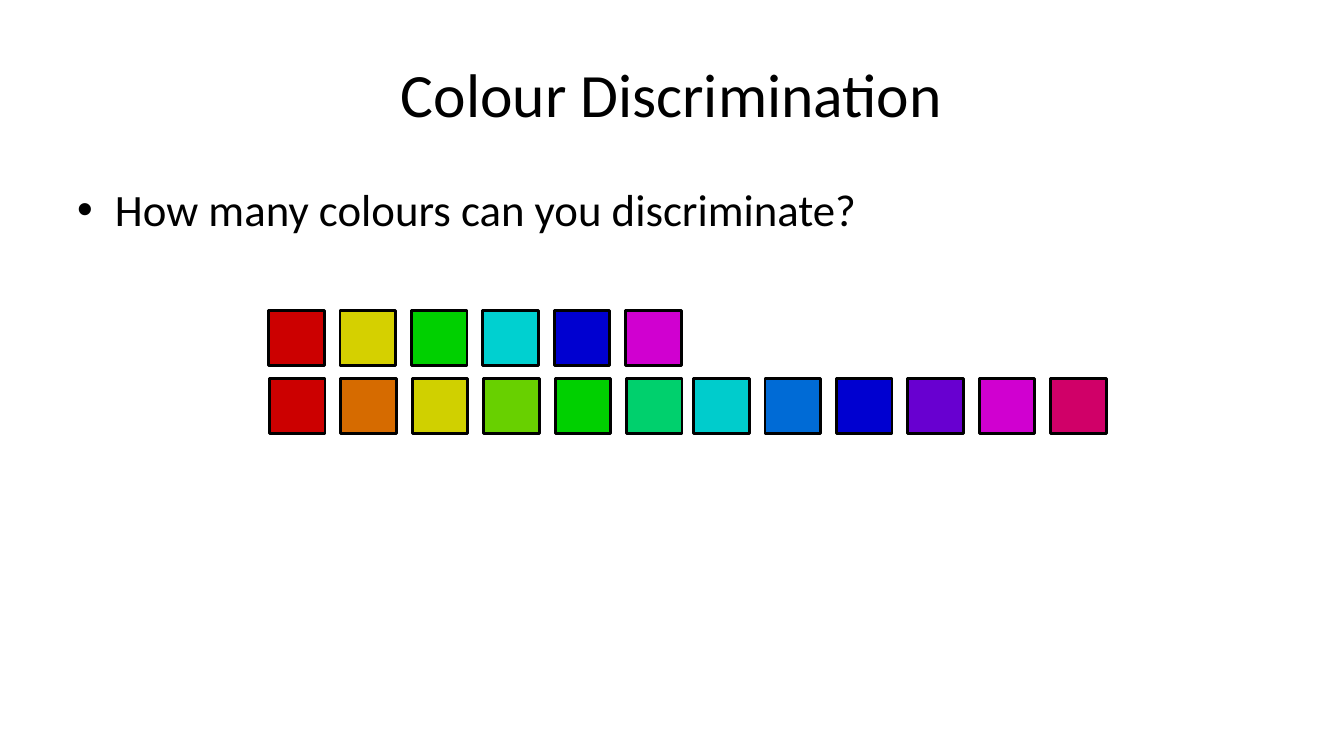
from pptx import Presentation
from pptx.dml.color import RGBColor
from pptx.enum.shapes import MSO_SHAPE
from pptx.enum.text import MSO_ANCHOR, MSO_AUTO_SIZE, PP_ALIGN
from pptx.util import Cm, Pt

# Content
TITLE = "Colour Discrimination"
QUESTION = "How many colours can you discriminate?"
BLACK = RGBColor(0, 0, 0)

# Each row is a group: top, then runs of swatches as (left, colours), in cm
ROWS = [
    (7.82, [(6.77, ["CC0000", "D5D000", "00D000", "00D0D0", "0000D0", "D000D0"])]),
    (9.53, [(6.79, ["CC0000", "D66B00", "D0D000", "68D000", "00D000", "00D06D"]),
            (17.48, ["00CCCC", "006BD6", "0000D0", "6800D0", "D000D0", "D00068"])]),
]
SIDE, PITCH = 1.4, 1.8

prs = Presentation()
prs.slide_width, prs.slide_height = Cm(33.87), Cm(19.05)
s = prs.slides.add_slide(prs.slide_layouts[1])


def fill_placeholder(sp, text, top, height, size, anchor, align):
    sp.left, sp.top, sp.width, sp.height = Cm(1.69), Cm(top), Cm(30.48), Cm(height)
    tf = sp.text_frame
    tf.text = text
    tf.word_wrap = True
    tf.auto_size = MSO_AUTO_SIZE.NONE
    tf.vertical_anchor = anchor
    p = tf.paragraphs[0]
    p.alignment = align
    p.font.name = "Calibri"
    p.font.size = Pt(size)
    p.font.color.rgb = BLACK


# Title and question
fill_placeholder(s.shapes.title, TITLE, 0.76, 3.18, 44, MSO_ANCHOR.MIDDLE, PP_ALIGN.CENTER)
fill_placeholder(s.placeholders[1], QUESTION, 4.45, 12.57, 32, MSO_ANCHOR.TOP, PP_ALIGN.LEFT)

# Colour swatches
for top, runs in ROWS:
    group = s.shapes.add_group_shape()
    for left, colours in runs:
        for i, colour in enumerate(colours):
            sp = group.shapes.add_shape(MSO_SHAPE.RECTANGLE, Cm(left + i * PITCH),
                                        Cm(top), Cm(SIDE), Cm(SIDE))
            sp.shadow.inherit = False
            sp.fill.solid()
            sp.fill.fore_color.rgb = RGBColor.from_string(colour)
            sp.line.color.rgb = BLACK
            sp.line.width = Pt(2)

prs.save("out.pptx")
